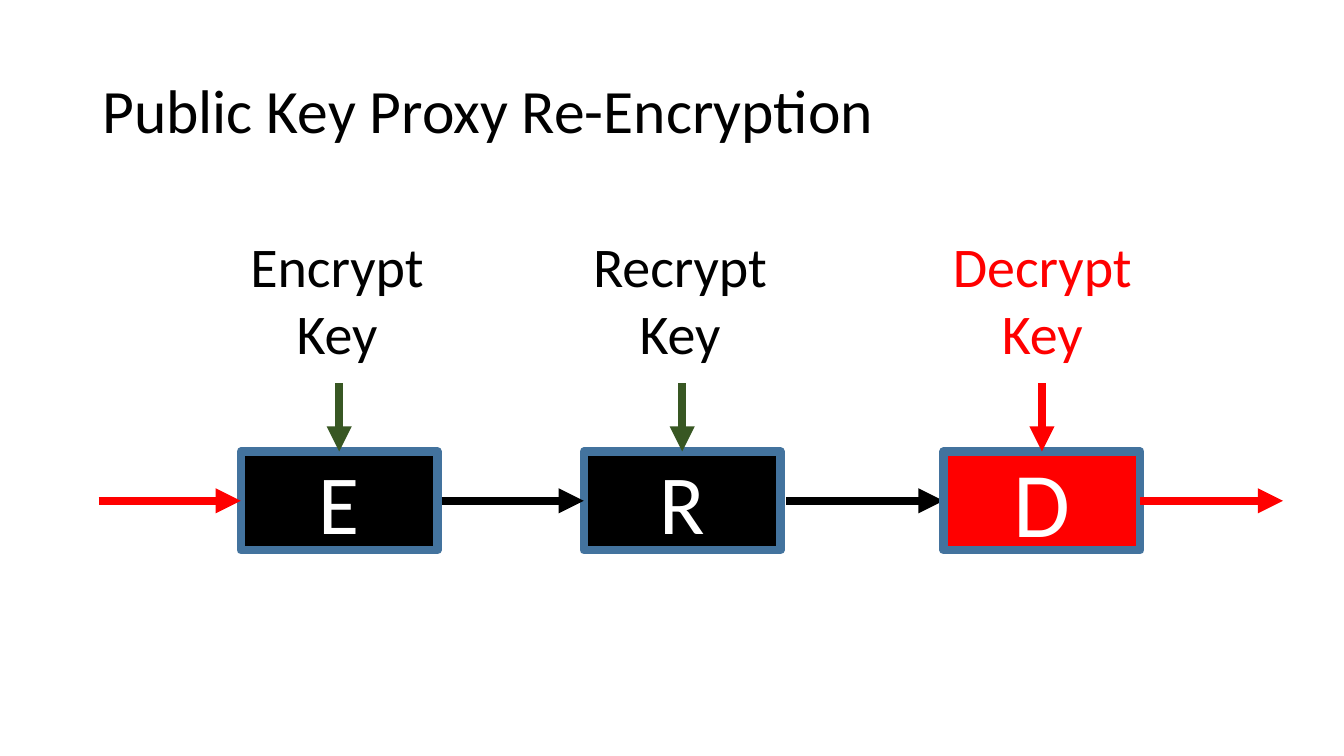
from dataclasses import dataclass
from typing import Optional

import lxml.etree
import pptx
import pptx.dml.color
import pptx.enum.dml
import pptx.enum.shapes
import pptx.enum.text
import pptx.oxml.ns
import pptx.util

Pt = pptx.util.Pt
Anchor = pptx.enum.text.MSO_ANCHOR
Align = pptx.enum.text.PP_ALIGN


@dataclass(frozen=True)
class Theme:
    font: str = "Calibri"
    black: str = "000000"
    white: str = "FFFFFF"
    red: str = "FF0000"
    green: str = "385723"
    border: str = "43739E"
    title_size: float = 44
    label_size: float = 40
    letter_size: float = 60
    large_letter_size: float = 66
    stroke: float = 6


THEME = Theme()
BLOCK_TOP, BLOCK_WIDTH, BLOCK_HEIGHT = 322.5, 140.5, 70.5
LABEL_TOP, LABEL_HEIGHT = 161.5, 104.5
KEY_ARROW_TOP = 273.75
FLOW_Y = BLOCK_TOP + BLOCK_HEIGHT / 2
FLOW_END = 916.5


@dataclass(frozen=True)
class Stage:
    letter: str
    key: str
    left: float
    input_left: float
    label_left: float
    label_width: float
    input_color: str = THEME.black
    key_color: str = THEME.black
    key_arrow_color: str = THEME.green
    fill: str = THEME.black
    letter_size: float = THEME.letter_size
    input_behind: bool = False


STAGES = [
    Stage("E", "Encrypt Key", 172, 70.5, 141, 199.5, input_color=THEME.red),
    Stage("R", "Recrypt Key", 417, 315.5, 386, 199.5),
    Stage("D", "Decrypt Key", 674, 561.5, 659.5, 170, key_color=THEME.red,
          key_arrow_color=THEME.red, fill=THEME.red,
          letter_size=THEME.large_letter_size, input_behind=True),
]


def rgb(color: str) -> pptx.dml.color.RGBColor:
    return pptx.dml.color.RGBColor.from_string(color)


def write_text(shape, text: str, *, size: float, color: str = THEME.black,
               align=Align.CENTER, anchor=Anchor.TOP, spacing: Optional[float] = None) -> None:
    frame = shape.text_frame
    frame.word_wrap = True
    frame.vertical_anchor = anchor
    paragraph = frame.paragraphs[0]
    paragraph.alignment = align
    paragraph.line_spacing = spacing
    run = paragraph.add_run()
    run.text = text
    run.font.name = THEME.font
    run.font.size = Pt(size)
    run.font.color.rgb = rgb(color)


def add_text_box(slide, left: float, top: float, width: float, height: float):
    return slide.shapes.add_textbox(Pt(left), Pt(top), Pt(width), Pt(height))


def add_arrow(slide, start: tuple[float, float], end: tuple[float, float], color: str):
    arrow = slide.shapes.add_connector(
        pptx.enum.shapes.MSO_CONNECTOR.STRAIGHT, *map(Pt, start), *map(Pt, end))
    arrow.line.color.rgb = rgb(color)
    arrow.line.width = Pt(THEME.stroke)
    qualify = pptx.oxml.ns.qn
    lxml.etree.SubElement(arrow.line._get_or_add_ln(), qualify("a:tailEnd"), type="triangle")
    properties = arrow.element.find(qualify("p:spPr"))
    lxml.etree.SubElement(properties, qualify("a:effectLst"))
    return arrow


def add_block(slide, stage: Stage):
    block = slide.shapes.add_shape(
        pptx.enum.shapes.MSO_SHAPE.RECTANGLE,
        Pt(stage.left), Pt(BLOCK_TOP), Pt(BLOCK_WIDTH), Pt(BLOCK_HEIGHT))
    block.shadow.inherit = False
    block.fill.solid()
    block.fill.fore_color.rgb = rgb(stage.fill)
    block.line.color.rgb = rgb(THEME.border)
    block.line.width = Pt(THEME.stroke)
    write_text(block, stage.letter, size=stage.letter_size, color=THEME.white, anchor=Anchor.MIDDLE)
    return block


def add_stage(slide, stage: Stage):
    block = add_block(slide, stage)
    flow = add_arrow(slide, (stage.input_left, FLOW_Y), (stage.left, FLOW_Y), stage.input_color)
    flow.end_connect(block, 1)
    if stage.input_behind:
        block.element.addprevious(flow.element)

    center = stage.left + BLOCK_WIDTH / 2
    key_arrow = add_arrow(slide, (center, KEY_ARROW_TOP), (center, BLOCK_TOP), stage.key_arrow_color)
    key_arrow.end_connect(block, 0)

    label = add_text_box(slide, stage.label_left, LABEL_TOP, stage.label_width, LABEL_HEIGHT)
    write_text(label, stage.key, size=THEME.label_size, color=stage.key_color)
    label.text_frame.auto_size = pptx.enum.text.MSO_AUTO_SIZE.SHAPE_TO_FIT_TEXT
    return block


def main() -> None:
    presentation = pptx.Presentation()
    presentation.slide_width, presentation.slide_height = Pt(960), Pt(540)
    slide = presentation.slides.add_slide(presentation.slide_layouts[6])

    title = add_text_box(slide, 66, 28.75, 828, 104.5)
    write_text(title, "Public Key Proxy Re-Encryption", size=THEME.title_size,
               align=Align.LEFT, anchor=Anchor.MIDDLE, spacing=0.9)

    blocks = [add_stage(slide, stage) for stage in STAGES]
    output_left = STAGES[-1].left + BLOCK_WIDTH
    output = add_arrow(slide, (output_left, FLOW_Y), (FLOW_END, FLOW_Y), THEME.red)
    output.begin_connect(blocks[-1], 3)

    presentation.save("out.pptx")


if __name__ == "__main__":
    main()
